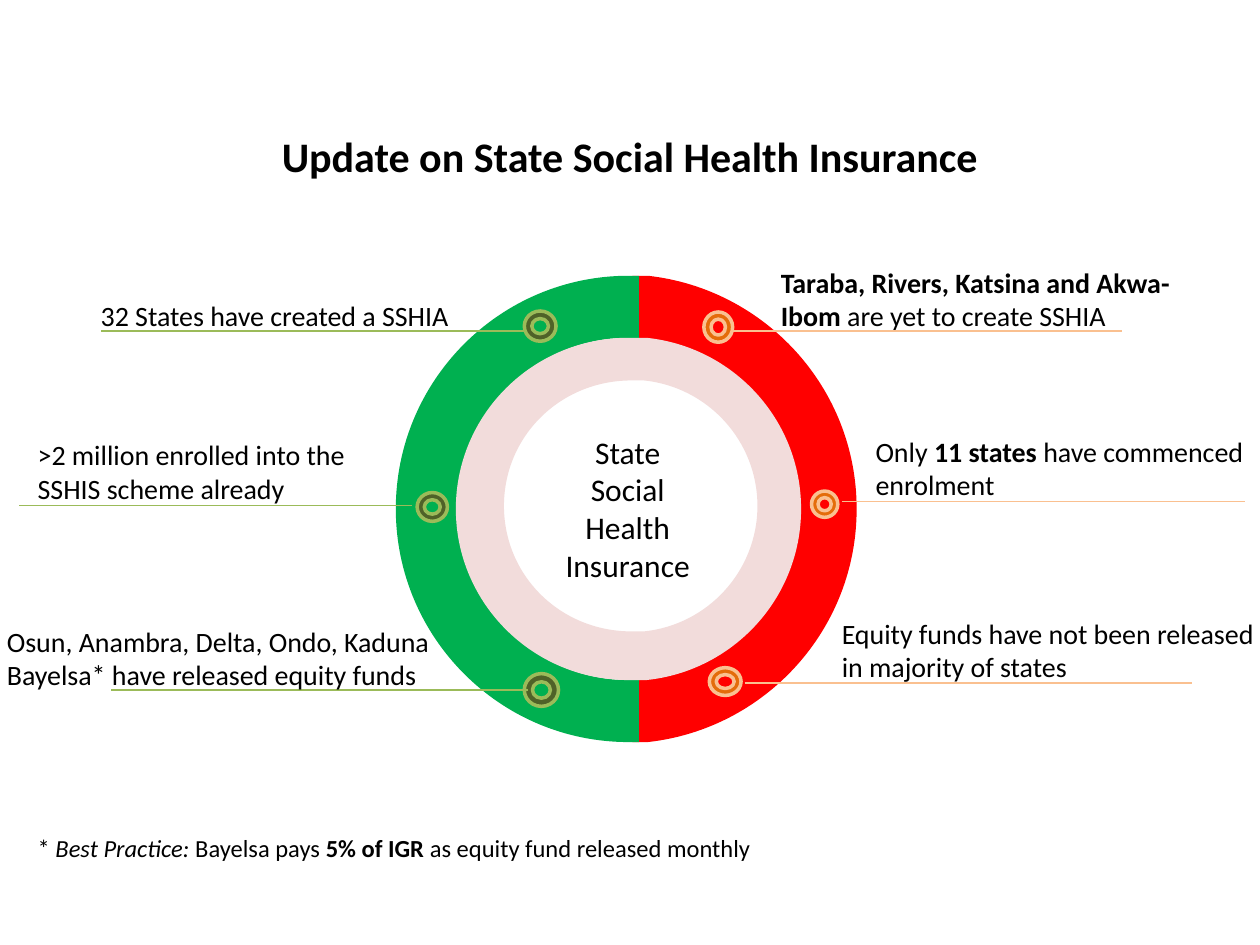
import pptx
import pptx.util
from pptx.dml.color import RGBColor
from pptx.enum.shapes import MSO_CONNECTOR, MSO_SHAPE
from pptx.enum.text import MSO_ANCHOR, MSO_AUTO_SIZE, PP_ALIGN
from pptx.oxml.ns import qn
from lxml import etree

Cm, Pt = pptx.util.Cm, pptx.util.Pt

TITLE = "Update on State Social Health Insurance"
HUB = "State Social Health Insurance"

# Upper halves of the ring edges (cm): cut end, curve start, two control
# points, widest point. The lower halves mirror them about the widest point.
RED_OUT = [(12.75, 5.56), (13.06, 5.56), (15.42, 5.82), (17.27, 7.82), (17.27, 10.26)]
RED_IN = [(12.75, 6.81), (12.93, 6.81), (14.66, 6.99), (16.03, 8.46), (16.03, 10.26)]
GREEN_OUT = [(12.88, 5.56), (12.67, 5.56), (10.08, 5.56), (7.98, 7.67), (7.98, 10.26)]
GREEN_IN = [(12.88, 6.81), (12.67, 6.81), (10.77, 6.81), (9.22, 8.36), (9.22, 10.26)]
BAND_OUT_R = [(12.88, 6.81), (13.03, 6.81), (14.78, 6.99), (16.15, 8.46), (16.15, 10.26)]
BAND_OUT_L = [(12.88, 6.81), (12.67, 6.81), (10.74, 6.81), (9.19, 8.36), (9.19, 10.26)]
BAND_IN_R = [(12.88, 7.67), (12.98, 7.67), (14.27, 7.8), (15.27, 8.89), (15.27, 10.2)]
BAND_IN_L = [(12.88, 7.67), (12.73, 7.67), (11.3, 7.67), (10.16, 8.79), (10.16, 10.2)]
RINGS = [
    ("FF0000", [(RED_OUT, RED_IN)]),
    ("00B050", [(GREEN_OUT, GREEN_IN)]),
    ("F2DCDB", [(BAND_OUT_R, BAND_OUT_L), (BAND_IN_R, BAND_IN_L)]),
]

# Markers: box, then line start x, end x, y (cm)
GREEN_MARKERS = ("4F6228", "9BBB59", [
    ((10.57, 6.27, 0.64, 0.61), (10.57, 2.03, 6.67)),
    ((8.41, 9.93, 0.61, 0.58), (8.31, 0.38, 10.19)),
    ((10.57, 13.58, 0.69, 0.66), (10.64, 2.24, 13.91)),
])
RED_MARKERS = ("E46C0A", "FAC090", [
    ((14.3, 13.46, 0.64, 0.56), (15.01, 24.03, 13.77)),
    ((16.36, 9.9, 0.53, 0.53), (16.97, 25.1, 10.11)),
    ((14.19, 6.29, 0.58, 0.61), (14.78, 22.61, 6.67)),
])

# Labels: box, text size, level, runs of (text, style)
LABELS = [
    ((0.51, 5.89, 9.86, 0.94), 16, 1, [("32 States have created a SSHIA", "")]),
    ((-0.76, 8.7, 8.23, 1.63), 16, 1,
     [(">2 million enrolled into the SSHIS scheme already", "")]),
    ((15.49, 5.22, 9.53, 1.63), 16, 0,
     [("Taraba, Rivers, Katsina and Akwa-Ibom ", "b"), ("are yet to create SSHIA", "")]),
    ((16.72, 12.3, 9.12, 1.63), 16, 0,
     [("Equity funds have not been released in majority of states", "")]),
    ((17.4, 8.63, 8.23, 1.63), 16, 0,
     [("Only ", ""), ("11 states ", "b"), ("have commenced enrolment", "")]),
    ((-0.11, 12.46, 9.96, 1.63), 16, 0,
     [("Osun, Anambra, Delta, Ondo, Kaduna Bayelsa* have released equity funds", "")]),
    ((0.51, 16.66, 20.6, 0.86), 14, 0,
     [("* ", ""), ("Best Practice: ", "i"), ("Bayelsa pays ", ""),
      ("5% of IGR ", "b"), ("as equity fund released monthly", "")]),
]


def rgb(color):
    return RGBColor.from_string(color)


def write(tf, runs, size, align=PP_ALIGN.LEFT, anchor=MSO_ANCHOR.TOP, level=0,
          fit=MSO_AUTO_SIZE.NONE):
    tf.word_wrap = True
    tf.auto_size = fit
    tf.vertical_anchor = anchor
    p = tf.paragraphs[0]
    p.alignment = align
    if level:
        p.level = level
        p._p.get_or_add_pPr().set("marL", str(Cm(1.27 * level)))
    for text, style in runs:
        r = p.add_run()
        r.text = text
        r.font.name = "Calibri"
        r.font.size = Pt(size)
        r.font.bold = "b" in style
        r.font.italic = "i" in style
        r.font.color.rgb = rgb("000000")


def paint(sp, fill, line=None):
    sp.shadow.inherit = False
    sp.fill.solid()
    sp.fill.fore_color.rgb = rgb(fill)
    if line:
        sp.line.color.rgb = rgb(line)
        sp.line.width = Pt(2)
    else:
        sp.line.fill.background()


def add_shape(shapes, kind, box, fill, line=None):
    sp = shapes.add_shape(kind, *map(Cm, box))
    paint(sp, fill, line)
    return sp


def mirrored(edge):
    """Whole edge, from its upper cut end to its lower one."""
    axis = edge[-1][1]
    points = edge + [(x, 2 * axis - y) for x, y in edge[-2::-1]]
    return [(Cm(x), Cm(y)) for x, y in points]


def add_ring(shapes, fill, contours):
    """Outline of edge pairs: down the first edge, back up the second."""
    fb = None
    for down, up in contours:
        points = mirrored(down) + mirrored(up)[::-1]
        if fb:
            fb.move_to(*points[0])
        else:
            fb = shapes.build_freeform(*points[0])
        fb.add_line_segments(points[1:], close=True)
    sp = fb.convert_to_shape()
    paint(sp, fill)
    lines = list(sp._element.iter(qn("a:lnTo")))
    per_contour = len(lines) // len(contours)
    for base in range(0, len(lines), per_contour):
        for first in (1, 4, 10, 13):
            trio = lines[base + first:base + first + 3]
            curve = etree.Element(qn("a:cubicBezTo"))
            trio[0].addprevious(curve)
            for ln in trio:
                curve.append(ln[0])
                ln.getparent().remove(ln)


def add_line(shapes, x1, x2, y, color):
    c = shapes.add_connector(MSO_CONNECTOR.STRAIGHT, Cm(x1), Cm(y), Cm(x2), Cm(y))
    c.line.color.rgb = rgb(color)
    c.line.width = Pt(0.75)
    etree.SubElement(c._element.spPr, qn("a:effectLst"))


def add_markers(s, fill, line, markers):
    for box, (x1, x2, y) in markers:
        shapes = s.shapes.add_group_shape().shapes
        add_shape(shapes, MSO_SHAPE.DONUT, box, fill, line)
        add_line(shapes, x1, x2, y, line)


def add_labels(s, labels):
    for box, size, level, runs in labels:
        tb = s.shapes.add_textbox(*map(Cm, box))
        write(tb.text_frame, runs, size, level=level, fit=MSO_AUTO_SIZE.SHAPE_TO_FIT_TEXT)


def main():
    prs = pptx.Presentation()
    prs.slide_width, prs.slide_height = Cm(25.4), Cm(19.05)
    s = prs.slides.add_slide(prs.slide_layouts[5])

    title = s.shapes.title
    title.left, title.top, title.width, title.height = map(Cm, (1.27, 2.51, 22.86, 1.42))
    write(title.text_frame, [(TITLE, "b")], 24, PP_ALIGN.CENTER)

    rings = s.shapes.add_group_shape().shapes
    for fill, contours in RINGS:
        add_ring(rings, fill, contours)
    hub = add_shape(s.shapes, MSO_SHAPE.FLOWCHART_CONNECTOR,
                    (10.46, 8.05, 4.39, 4.39), "FFFFFF")
    write(hub.text_frame, [(HUB, "")], 18, PP_ALIGN.CENTER, MSO_ANCHOR.MIDDLE)

    add_markers(s, *GREEN_MARKERS)
    add_labels(s, LABELS[:4])
    add_markers(s, *RED_MARKERS)
    add_labels(s, LABELS[4:])

    prs.save("out.pptx")


if __name__ == "__main__":
    main()
